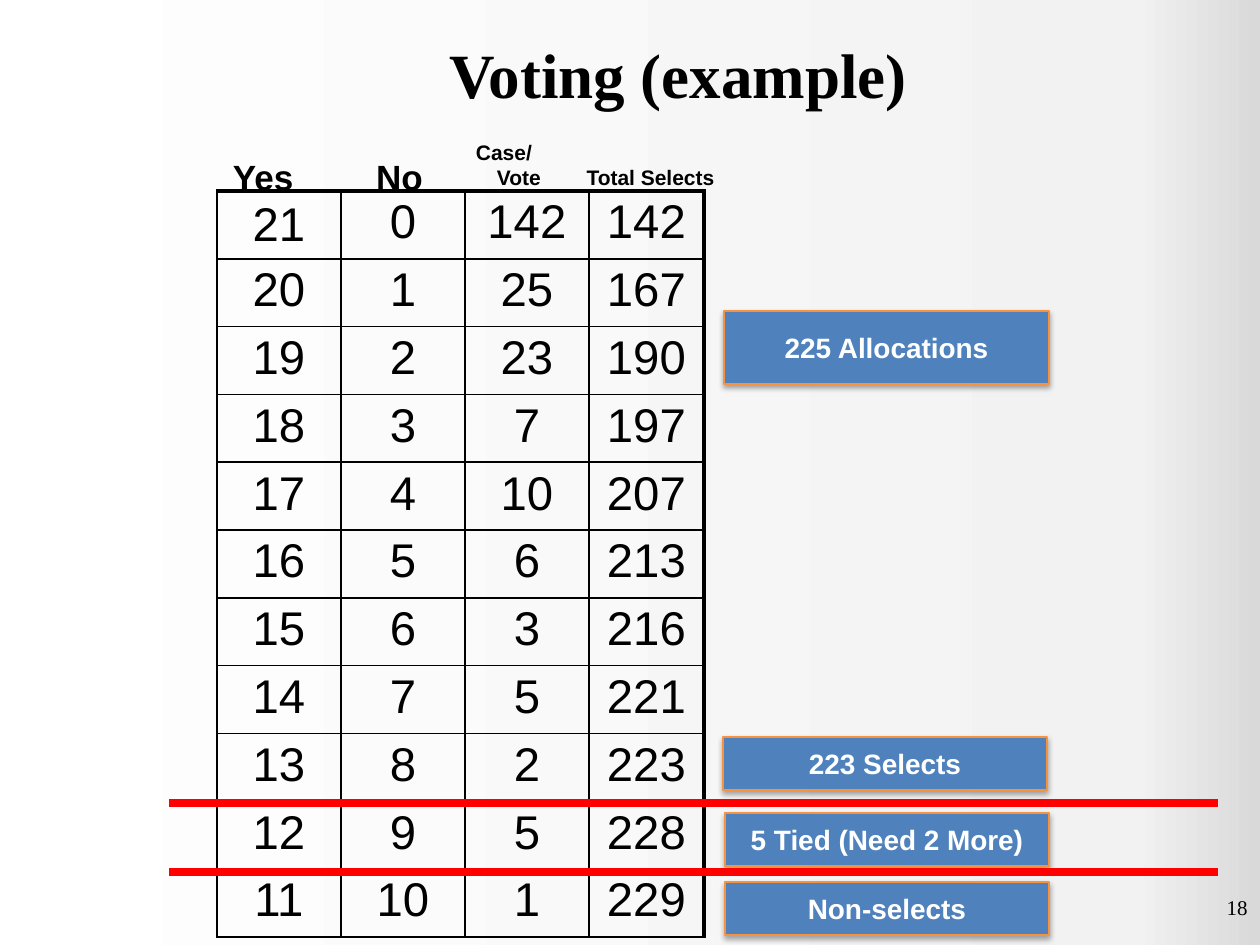
from itertools import accumulate

from pptx import Presentation
from pptx.dml.color import RGBColor
from pptx.enum.shapes import MSO_CONNECTOR as Connector, MSO_SHAPE as Shape
from pptx.enum.text import MSO_ANCHOR as Anchor, PP_ALIGN as Align
from pptx.oxml import parse_xml
from pptx.oxml.ns import nsdecls
from pptx.util import Emu, Pt

PX_PER_INCH = 126
BLACK = RGBColor(0x00, 0x00, 0x00)
WHITE = RGBColor(0xFF, 0xFF, 0xFF)
BLUE = RGBColor(0x4F, 0x81, 0xBD)
ORANGE = RGBColor(0xF6, 0x92, 0x40)
RED = RGBColor(0xFF, 0x00, 0x00)
SERIF, SANS = "Times New Roman", "Arial"
THIN, THICK = Pt(1), Pt(2.25)

BACKGROUND_STOPS = [(0, "FFFFFF"), (90, "F2F2F2"), (100, "D9D9D9")]
CASES_PER_VOTE = [142, 25, 23, 7, 10, 6, 3, 5, 2, 5, 1]
VOTERS = 21
COLUMN_WIDTHS = [124, 124, 124, 115]
HEADINGS = [
    ("Yes", (233, 149, 89, 49), 20, Align.LEFT),
    ("No", (355, 149, 89, 49), 20, Align.CENTER),
    ("Case/Vote", (476, 142, 99, 48), 12, Align.LEFT),
    ("Total Selects", (578, 142, 145, 48), 12, Align.CENTER),
]
CALLOUTS = [
    ("Non-selects", (725, 882, 324, 53)),
    ("225 Allocations", (724, 311, 325, 73)),
    ("223 Selects", (723, 737, 324, 53)),
    ("5 Tied (Need 2 More)", (725, 813, 324, 53)),
]
CUTOFFS = [803, 872]


def px(length):
    """Turn pixels into EMU."""
    return Emu(round(length * 914400 / PX_PER_INCH))


def write(text_frame, text, size, font_name, color, bold, align, anchor):
    """Put one formatted paragraph in a text frame."""
    text_frame.text = text
    text_frame.word_wrap = True
    text_frame.vertical_anchor = anchor
    paragraph = text_frame.paragraphs[0]
    paragraph.alignment = align
    font = paragraph.runs[0].font
    font.size, font.name, font.bold = Pt(size), font_name, bold
    font.color.rgb = color
    return paragraph


def set_background(slide):
    """Fill the slide with a left-to-right gradient."""
    stops = "".join(
        f'<a:gs pos="{percent * 1000}"><a:srgbClr val="{color}"/></a:gs>'
        for percent, color in BACKGROUND_STOPS
    )
    slide.element.cSld.insert(0, parse_xml(
        f'<p:bg {nsdecls("p", "a")}><p:bgPr><a:gradFill rotWithShape="1">'
        f'<a:gsLst>{stops}</a:gsLst><a:lin ang="0" scaled="0"/></a:gradFill>'
        "<a:effectLst/></p:bgPr></p:bg>"
    ))


def add_text(slide, box, text, size, font_name, bold, align, anchor):
    """Add a text box with black text."""
    shape = slide.shapes.add_textbox(*map(px, box))
    write(shape.text_frame, text, size, font_name, BLACK, bold, align, anchor)
    return shape


def add_heading(slide, text, box, size, align):
    """Add a column heading with a hanging indent and no margins."""
    shape = add_text(slide, box, text, size, SANS, True, align, Anchor.BOTTOM)
    frame = shape.text_frame
    frame.margin_left = frame.margin_right = frame.margin_top = frame.margin_bottom = 0
    properties = frame.paragraphs[0]._p.get_or_add_pPr()
    properties.set("marL", str(px(21)))
    properties.set("indent", str(-px(21)))


def set_borders(cell, **widths):
    """Draw black cell borders, given in the order L, R, T, B."""
    for side, width in widths.items():
        cell._tc.get_or_add_tcPr().append(parse_xml(
            f'<a:ln{side} {nsdecls("a")} w="{width}"><a:solidFill>'
            f'<a:srgbClr val="{BLACK}"/></a:solidFill></a:ln{side}>'
        ))


def add_votes_table(slide):
    """Add the table of votes with running totals."""
    totals = accumulate(CASES_PER_VOTE)
    rows = [
        (VOTERS - no, no, cases, total)
        for no, (cases, total) in enumerate(zip(CASES_PER_VOTE, totals))
    ]
    last = len(COLUMN_WIDTHS) - 1
    table = slide.shapes.add_table(
        len(rows), len(COLUMN_WIDTHS), px(217), px(191), px(sum(COLUMN_WIDTHS)), px(746)
    ).table
    table.first_row = table.horz_banding = False
    for column, width in zip(table.columns, COLUMN_WIDTHS):
        column.width = px(width)
    for i, row in enumerate(rows):
        for j, value in enumerate(row):
            cell = table.cell(i, j)
            write(cell.text_frame, str(value), 27, SANS, BLACK, False, Align.CENTER, None)
            cell.vertical_anchor = Anchor.MIDDLE if i == j == 0 else Anchor.TOP
            cell.margin_left = cell.margin_right = px(11)
            cell.margin_top = cell.margin_bottom = px(5)
            set_borders(cell, L=THIN, R=THICK if j == last else THIN,
                        T=THICK if i == 0 else THIN, B=THIN)
            cell.fill.background()


def add_callout(slide, text, box):
    """Add a blue labelled rectangle with a soft shadow."""
    shape = slide.shapes.add_shape(Shape.RECTANGLE, *map(px, box))
    shape.fill.solid()
    shape.fill.fore_color.rgb = BLUE
    shape.line.color.rgb = ORANGE
    shape.line.width = Pt(0.75)
    shape.shadow.inherit = False
    shape._element.spPr.find("{*}effectLst").append(parse_xml(
        f'<a:outerShdw {nsdecls("a")} blurRad="40000" dist="23000" dir="5400000" '
        'rotWithShape="0"><a:srgbClr val="000000"><a:alpha val="35000"/>'
        "</a:srgbClr></a:outerShdw>"
    ))
    write(shape.text_frame, text, 16, SANS, WHITE, True, Align.CENTER, Anchor.MIDDLE)


def add_cutoff(slide, y):
    """Add a red horizontal cut-off line."""
    line = slide.shapes.add_connector(
        Connector.STRAIGHT, px(169), px(y), px(1218), px(y)
    )
    line.line.color.rgb = RED
    line.line.width = Pt(4.5)
    line._element.spPr.append(parse_xml(f'<a:effectLst {nsdecls("a")}/>'))


def main():
    """Build and save the voting slide."""
    presentation = Presentation()
    presentation.slide_width, presentation.slide_height = px(1260), px(945)
    slide = presentation.slides.add_slide(presentation.slide_layouts[6])
    set_background(slide)
    add_text(slide, (147, 0, 1062, 147), "Voting (example)", 36, SERIF, True,
             Align.CENTER, Anchor.MIDDLE)
    add_votes_table(slide)
    for heading in HEADINGS:
        add_heading(slide, *heading)
    for callout in CALLOUTS:
        add_callout(slide, *callout)
    for y in CUTOFFS:
        add_cutoff(slide, y)
    add_text(slide, (966, 876, 294, 50), "18", 12, SERIF, False,
             Align.RIGHT, Anchor.BOTTOM)
    presentation.save("out.pptx")


if __name__ == "__main__":
    main()
